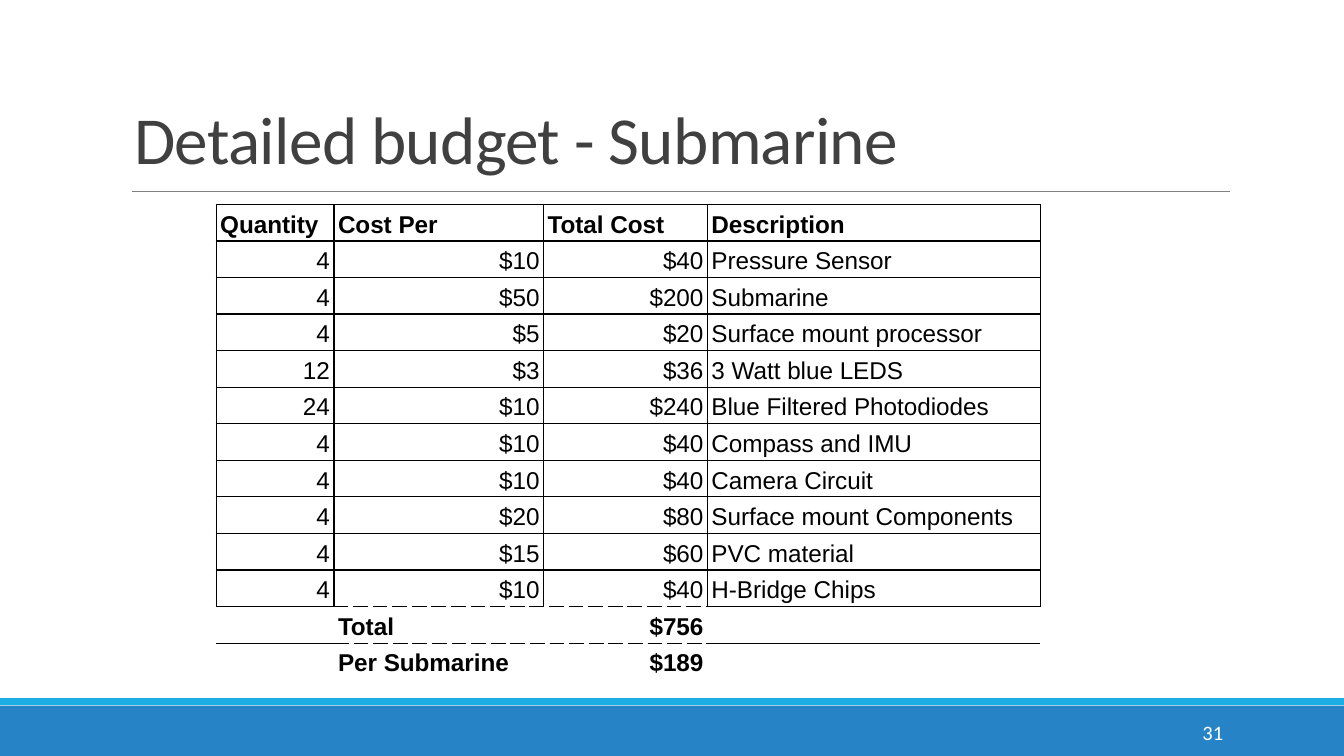
from lxml import etree
from pptx import Presentation
from pptx.dml.color import RGBColor
from pptx.enum import shapes, text
from pptx.oxml import ns
from pptx.util import Pt

BLACK = RGBColor(0x00, 0x00, 0x00)
WHITE = RGBColor(0xFF, 0xFF, 0xFF)
DARK_GRAY = RGBColor(0x40, 0x40, 0x40)
RULE_GRAY = RGBColor(0x80, 0x80, 0x80)
BLUE = RGBColor(0x26, 0x83, 0xC6)
CYAN = RGBColor(0x1C, 0xAD, 0xE4)

HEADINGS = ["Quantity", "Cost Per", "Total Cost", "Description"]
ITEMS = [
    ["4", "$10", "$40", "Pressure Sensor"],
    ["4", "$50", "$200", "Submarine"],
    ["4", "$5", "$20", "Surface mount processor"],
    ["12", "$3", "$36", "3 Watt blue LEDS"],
    ["24", "$10", "$240", "Blue Filtered Photodiodes"],
    ["4", "$10", "$40", "Compass and IMU"],
    ["4", "$10", "$40", "Camera Circuit"],
    ["4", "$20", "$80", "Surface mount Components"],
    ["4", "$15", "$60", "PVC material"],
    ["4", "$10", "$40", "H-Bridge Chips"],
]
TOTALS = [["", "Total", "$756", ""], ["", "Per Submarine", "$189", ""]]
COLUMN_WIDTHS = [63.1, 112.3, 87.8, 178.4]
ROW_HEIGHT = 19.6
CELL_SIZE = 13


def add_bar(slide, top, height, color):
    bar = slide.shapes.add_shape(
        shapes.MSO_SHAPE.RECTANGLE, Pt(0), Pt(top), Pt(720), Pt(height))
    bar.shadow.inherit = False
    bar.fill.solid()
    bar.fill.fore_color.rgb = color
    bar.line.fill.background()


def add_rule(slide, left, right, top):
    rule = slide.shapes.add_connector(
        shapes.MSO_CONNECTOR.STRAIGHT, Pt(left), Pt(top), Pt(right), Pt(top))
    rule.line.color.rgb = RULE_GRAY
    rule.line.width = Pt(0.5)
    etree.SubElement(rule._element.spPr, ns.qn("a:effectLst"))


def add_run(paragraph, words, font_name, size, color, bold=False):
    run = paragraph.add_run()
    run.text = words
    run.font.name = font_name
    run.font.size = Pt(size)
    run.font.bold = bold
    run.font.color.rgb = color
    return run


def add_text(slide, box, words, size, color, anchor, align):
    """Add a one-line Calibri text box and return its paragraph and run."""
    frame = slide.shapes.add_textbox(*(Pt(length) for length in box)).text_frame
    frame.word_wrap = True
    frame.vertical_anchor = anchor
    paragraph = frame.paragraphs[0]
    paragraph.alignment = align
    return paragraph, add_run(paragraph, words, "Calibri", size, color)


def set_borders(cell, styles):
    """Draw the left, right, top and bottom edges; None hides an edge."""
    properties = cell._tc.get_or_add_tcPr()
    for index, (side, style) in enumerate(zip("LRTB", styles)):
        edge = etree.Element(ns.qn(f"a:ln{side}"), w=str(Pt(0.75)))
        if style:
            fill = etree.SubElement(edge, ns.qn("a:solidFill"))
            etree.SubElement(fill, ns.qn("a:srgbClr"), val=str(BLACK))
            etree.SubElement(edge, ns.qn("a:prstDash"), val=style)
        else:
            etree.SubElement(edge, ns.qn("a:noFill"))
        properties.insert(index, edge)


def border_styles(row, column):
    last_item = len(ITEMS)
    side = "solid" if row <= last_item else None
    below_items = "dash" if column in (1, 2) else "solid"
    top = "solid" if row <= last_item else below_items
    if row < last_item:
        bottom = "solid"
    else:
        bottom = below_items if row <= last_item + 1 else None
    return side, side, top, bottom


def fill_cell(cell, words, bold):
    cell.fill.background()
    cell.vertical_anchor = text.MSO_ANCHOR.BOTTOM
    cell.margin_left = cell.margin_right = Pt(2.2)
    cell.margin_top = Pt(0)
    cell.margin_bottom = Pt(1.5)
    paragraph = cell.text_frame.paragraphs[0]
    paragraph.line_spacing = 1.15
    is_number = words.startswith("$") or words.isdigit()
    paragraph.alignment = text.PP_ALIGN.RIGHT if is_number else text.PP_ALIGN.LEFT
    if words:
        add_run(paragraph, words, "Arial", CELL_SIZE, BLACK, bold)
    else:
        paragraph._p.get_or_add_endParaRPr().set("sz", str(CELL_SIZE * 100))


def add_budget_table(slide, left, top):
    rows = [HEADINGS, *ITEMS, *TOTALS]
    table = slide.shapes.add_table(
        len(rows), len(HEADINGS), Pt(left), Pt(top),
        Pt(sum(COLUMN_WIDTHS)), Pt(ROW_HEIGHT * len(rows))).table
    table.first_row = False
    table.horz_banding = False
    for column, width in zip(table.columns, COLUMN_WIDTHS):
        column.width = Pt(width)
    for row_index, values in enumerate(rows):
        table.rows[row_index].height = Pt(ROW_HEIGHT)
        bold = values is HEADINGS or values in TOTALS
        for column_index, words in enumerate(values):
            cell = table.cell(row_index, column_index)
            fill_cell(cell, words, bold)
            set_borders(cell, border_styles(row_index, column_index))


def main():
    presentation = Presentation()
    presentation.slide_width = Pt(720)
    presentation.slide_height = Pt(405)
    slide = presentation.slides.add_slide(presentation.slide_layouts[6])

    add_bar(slide, 378, 27, BLUE)
    add_bar(slide, 374, 3.8, CYAN)
    add_rule(slide, 70.8, 659, 102.6)

    title, title_run = add_text(
        slide, (64.8, 17.2, 594, 85.7), "Detailed budget - Submarine", 36,
        DARK_GRAY, text.MSO_ANCHOR.BOTTOM, text.PP_ALIGN.LEFT)
    title.line_spacing = 0.85
    title_run.font._element.set("spc", "-36")
    frame = slide.shapes[-1].text_frame
    frame.margin_top = frame.margin_bottom = Pt(7.2)

    add_budget_table(slide, 115.8, 109.5)
    add_text(slide, (584.6, 381.6, 77.8, 21.6), "31", 11, WHITE,
             text.MSO_ANCHOR.MIDDLE, text.PP_ALIGN.RIGHT)
    presentation.save("out.pptx")


if __name__ == "__main__":
    main()
